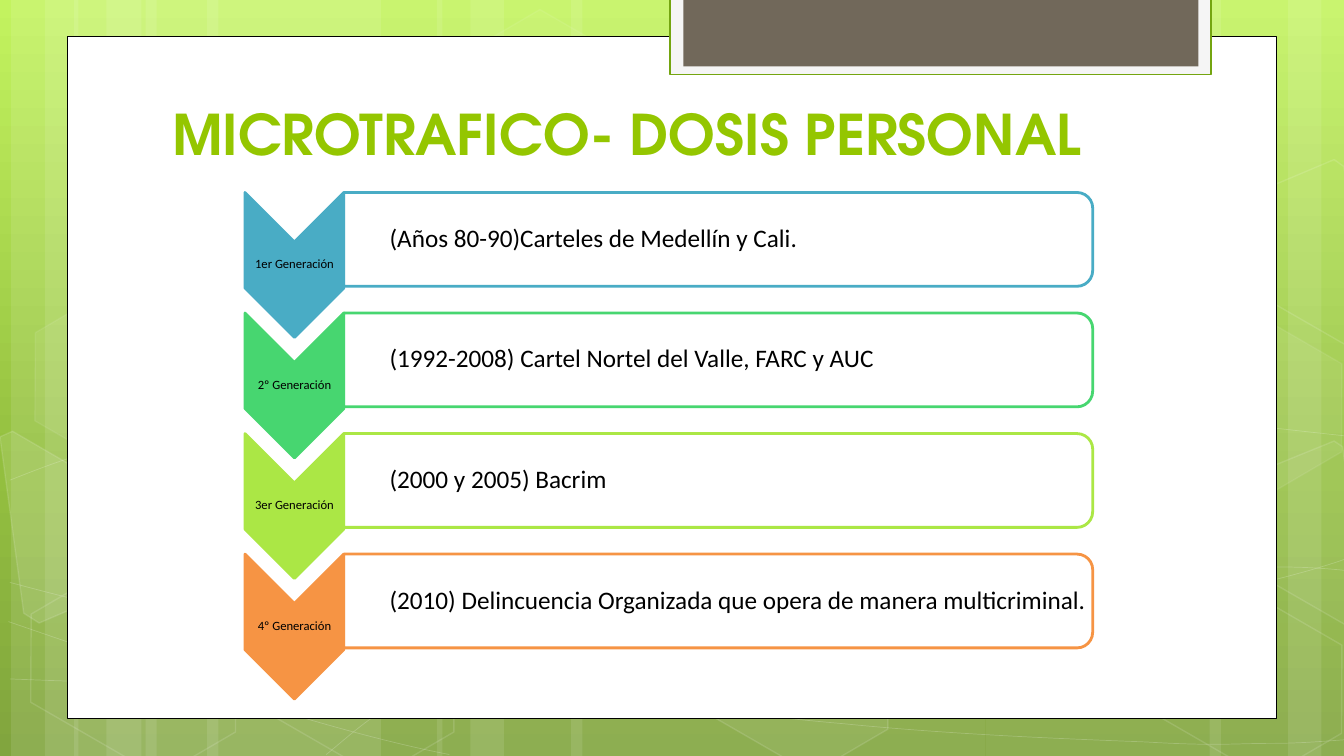
from copy import deepcopy

from pptx import Presentation
from pptx.dml.color import RGBColor
from pptx.enum.shapes import MSO_SHAPE as SHAPE
from pptx.enum.text import MSO_ANCHOR as ANCHOR, MSO_AUTO_SIZE as AUTO, PP_ALIGN as ALIGN
from pptx.oxml.ns import qn
from pptx.oxml.xmlchemy import OxmlElement
from pptx.util import Pt

W, H = 960, 540
WHITE = "FFFFFF"
SKY = [(0, "C3F35F"), (0.62, "93BF3F"), (1, "81A53E")]
BANDS = [(104, 168), (8, 48), (32, 80), (148, 168), (53, 48), (76, 80),
         (704, 168), (920, 48), (864, 80), (408, 296), (312, 48), (336, 80)]
ARCS = [
    [(7, 485), (59, 487), (111, 489), (183, 488), (255, 487), (343, 486), (439, 479),
     (536, 472), (672, 458), (760, 444), (848, 431), (938, 409), (967, 397)],
    [(7, 343), (35, 332), (62, 321), (117, 310), (171, 300), (248, 284), (333, 279),
     (419, 274), (522, 273), (628, 279), (734, 285), (909, 306), (967, 312)],
    [(6, 444), (122, 484), (238, 523), (321, 539)],
    [(7, 416), (37, 424), (67, 432), (123, 444), (179, 454), (262, 472), (342, 485),
     (422, 497), (523, 510), (603, 517), (683, 525), (768, 528), (819, 530),
     (869, 533), (882, 531), (907, 531), (932, 531), (950, 529), (967, 528)],
    [(233, 539), (250, 525), (266, 510), (290, 498), (314, 485), (346, 470), (372, 460),
     (399, 450), (415, 446), (451, 438), (486, 431), (551, 421), (584, 416),
     (618, 411), (623, 411), (653, 410), (683, 408), (734, 405), (762, 405),
     (796, 404), (851, 405), (851, 405), (851, 405), (914, 405), (914, 405),
     (932, 405), (948, 406), (966, 408)],
]
HEXAGONS = [(320, 26, 4, 8), (477, 424, 6, 12), (11, 426, 0, 12), (14, 225, 7, 8),
            (167, 426, 0, 12), (801, 427, 0, 12), (801, 226, 7, 8)]
SHARDS = [
    ([(0, 312), (9, 308), (83, 351), (91, 418), (28, 445), (17, 438)], 10),
    ([(889, 341), (953, 315), (959, 319), (977, 450), (971, 452), (898, 410)], 4),
    ([(889, 141), (953, 114), (960, 119), (977, 249), (971, 252), (898, 210)], 0),
]
GENERATIONS = [
    ("1er Generación", "(Años 80-90)Carteles de Medellín y Cali.", "49ACC5"),
    ("2º Generación", "(1992-2008) Cartel Nortel del Valle, FARC y AUC", "47D670"),
    ("3er Generación", "(2000 y 2005) Bacrim", "ABE745"),
    ("4º Generación", "(2010) Delincuencia Organizada que opera de manera multicriminal.", "F69444"),
]


def set_color(fill, color, opacity=100):
    """Make a fill solid in a hex colour, with an opacity in percent."""
    fill.solid()
    fill.fore_color.rgb = RGBColor.from_string(color)
    if opacity < 100:
        alpha = OxmlElement("a:alpha")
        alpha.set("val", str(opacity * 1000))
        fill._xPr.find(".//" + qn("a:srgbClr")).append(alpha)


def paint(sp, fill=None, opacity=100, line=None, width=1, line_opacity=100):
    """Set the fill and outline of a shape and drop its shadow."""
    sp.shadow.inherit = False
    if fill and opacity:
        set_color(sp.fill, fill, opacity)
    else:
        sp.fill.background()
    if line:
        set_color(sp.line.fill, line, line_opacity)
        sp.line.width = Pt(width)
    else:
        sp.line.fill.background()


def add_shape(s, kind, x, y, w, h, rotation=0, adjust=(), **look):
    """Add a preset shape in a box given in points."""
    sp = s.shapes.add_shape(kind, Pt(x), Pt(y), Pt(w), Pt(h))
    sp.rotation = rotation
    for i, value in enumerate(adjust):
        sp.adjustments[i] = value
    paint(sp, **look)


def add_outline(s, points, close, **look):
    """Add a freeform through points."""
    (x, y), *rest = points
    builder = s.shapes.build_freeform(Pt(x), Pt(y))
    builder.add_line_segments([(Pt(a), Pt(b)) for a, b in rest], close=close)
    sp = builder.convert_to_shape()
    paint(sp, **look)
    return sp


def bend(sp):
    """Turn each three segments of a freeform into one cubic curve."""
    lines = list(sp._element.iter(qn("a:lnTo")))
    for i in range(0, len(lines), 3):
        curve = OxmlElement("a:cubicBezTo")
        lines[i].addprevious(curve)
        for line in lines[i:i + 3]:
            curve.append(line[0])
            line.getparent().remove(line)


def write(tf, text, size=18, font="Calibri", color="000000", bold=False, align=ALIGN.LEFT,
          anchor=ANCHOR.MIDDLE, insets=(1, 1, 1, 1), spacing=0.89, margin=0, indent=0,
          line_break=False):
    """Write one formatted paragraph into a text frame."""
    tf.word_wrap, tf.auto_size, tf.vertical_anchor = True, AUTO.NONE, anchor
    tf.margin_left, tf.margin_top, tf.margin_right, tf.margin_bottom = map(Pt, insets)
    p = tf.paragraphs[0]
    p.alignment, p.line_spacing = align, spacing
    pPr = p._p.get_or_add_pPr()
    pPr.set("marL", str(Pt(margin)))
    pPr.set("indent", str(Pt(indent)))
    r = p.add_run()
    r.text = text
    r.font.size, r.font.name, r.font.bold = Pt(size), font, bold
    set_color(r.font.fill, color)
    if line_break:
        p.add_line_break()
        rPr = r._r.get_or_add_rPr()
        p._p[-1].append(deepcopy(rPr))
        end = OxmlElement("a:endParaRPr")
        end.set("sz", str(size * 100))
        end.extend(deepcopy(rPr))
        p._p.append(end)


def add_text(s, text, x, y, w, h, **fmt):
    """Add a text box in a box given in points."""
    write(s.shapes.add_textbox(Pt(x), Pt(y), Pt(w), Pt(h)).text_frame, text, **fmt)


def draw_backdrop(s, h):
    """Draw the gradient, light bands, arcs and hexagons."""
    fill = s.background.fill
    fill.gradient()
    fill.gradient_angle = 270
    stops = s._element.find(".//" + qn("a:gsLst"))
    stops.append(deepcopy(stops[0]))
    for stop, (position, color) in zip(fill.gradient_stops, SKY):
        stop.position = position
        stop.color.rgb = RGBColor.from_string(color)
    for x, width in BANDS:
        add_shape(s, SHAPE.RECTANGLE, x, 0, width, h, fill=WHITE, opacity=10)
    for arc in ARCS:
        bend(add_outline(s, arc, False, line=WHITE, width=0.5, line_opacity=20))
    for x, y, opacity, edge in HEXAGONS:
        add_shape(s, SHAPE.HEXAGON, x, y, 168.5, 109.5, 30, (0.285,), fill=WHITE,
                  opacity=opacity, line=WHITE, line_opacity=edge)
    for points, opacity in SHARDS:
        add_outline(s, points, True, fill=WHITE, opacity=opacity, line=WHITE, line_opacity=12)


def draw_panel(s, x, y, w, h):
    """Draw the white panel with the tab hanging over its top edge."""
    add_shape(s, SHAPE.RECTANGLE, x, y, w, h, fill=WHITE, line="000000", width=0.5)
    tab = x + 430.8
    add_shape(s, SHAPE.RECTANGLE, tab, -1.5, 386, 54.8, fill="F5F5F5", line="74A510", width=1.25)
    add_shape(s, SHAPE.RECTANGLE, tab + 9.3, -1.5, 368, 49, fill="71685A")


def draw_title(s, text, x, y, w, h):
    """Place the title placeholder in front of the panel."""
    sp = s.shapes.title
    s.shapes._spTree.append(sp._element)
    sp.left, sp.top, sp.width, sp.height = Pt(x), Pt(y), Pt(w), Pt(h)
    write(sp.text_frame, text, size=40, font="TeX Gyre Adventor", color="94C600", bold=True,
          anchor=ANCHOR.BOTTOM, insets=(7.2, 3.6, 7.2, 3.6), spacing=1, line_break=True)


def draw_generation(s, label, detail, color, x, y, w, h):
    """Draw one row: a downward chevron and its framed description."""
    cw, ch = 70.6, 103.5
    fx, fw = x + cw, w - cw
    add_shape(s, SHAPE.CHEVRON, x + (cw - ch) / 2, y + (ch - cw) / 2, ch, cw, 90, (0.5,),
              fill=color, line=color, width=2)
    add_text(s, label, x, y + 36, cw, 31, size=9, align=ALIGN.CENTER)
    add_shape(s, SHAPE.ROUND_2_SAME_RECTANGLE, fx + (fw - h) / 2, y + (h - fw) / 2, h, fw, 90,
              (0.167, 0), fill=WHITE, opacity=90, line=color, width=2)
    add_text(s, detail, fx, y + 3, fw - 3.5, h - 6, insets=(10.2, 1, 0, 1), margin=13.5, indent=9)


def main():
    """Build the slide and save it."""
    prs = Presentation()
    prs.slide_width, prs.slide_height = Pt(W), Pt(H)
    s = prs.slides.add_slide(prs.slide_layouts[5])
    draw_backdrop(s, H)
    draw_panel(s, 48, 26, 864, 487)
    draw_title(s, "MICROTRAFICO- DOSIS PERSONAL", 115.8, 63.4, 697, 107)
    for i, (label, detail, color) in enumerate(GENERATIONS):
        draw_generation(s, label, detail, color, 175, 137.5 + 86.1 * i, 605.5, 67)
    prs.save("out.pptx")


if __name__ == "__main__":
    main()
